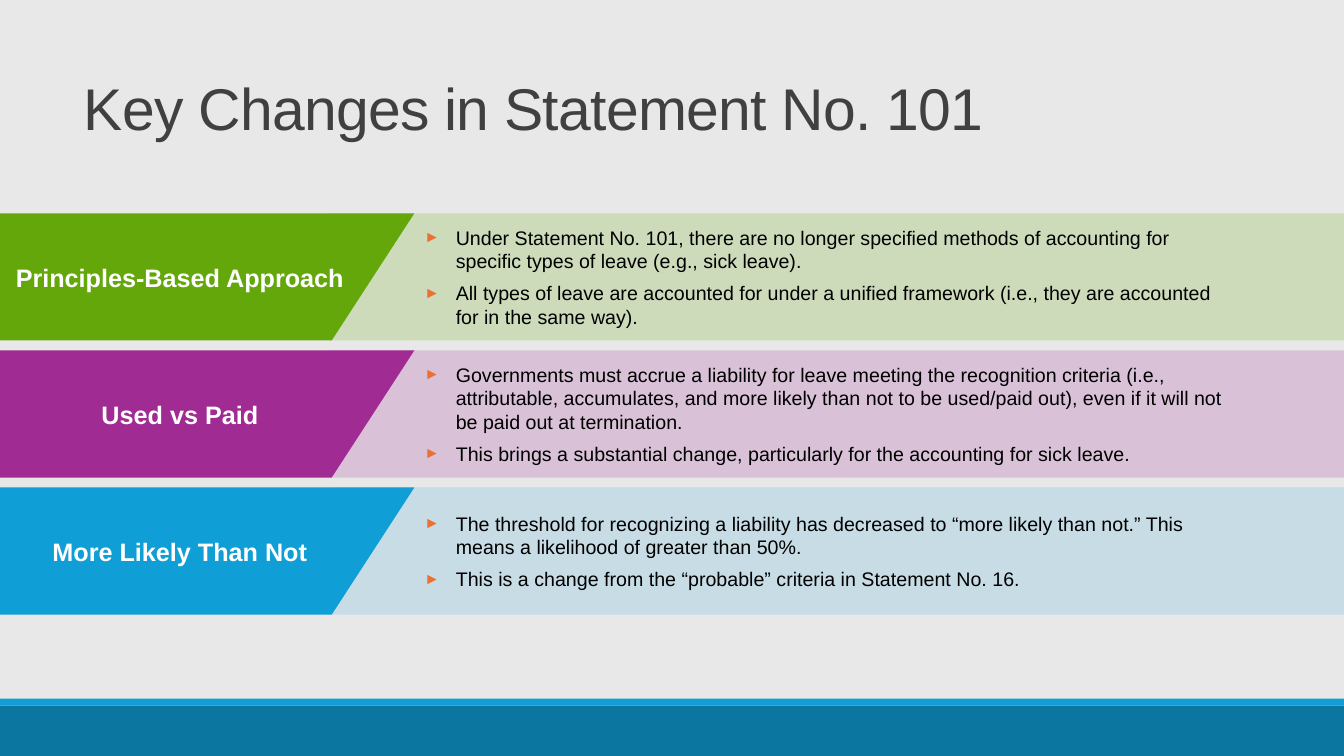
from dataclasses import dataclass

from lxml import etree
from pptx import Presentation
from pptx.dml.color import RGBColor
from pptx.enum.shapes import MSO_SHAPE
from pptx.enum.text import MSO_ANCHOR, PP_ALIGN
from pptx.oxml.ns import qn
from pptx.util import Pt

RECTANGLE = MSO_SHAPE.RECTANGLE
PROCESS = MSO_SHAPE.FLOWCHART_PROCESS
MIDDLE = MSO_ANCHOR.MIDDLE
LEFT, CENTER = PP_ALIGN.LEFT, PP_ALIGN.CENTER


@dataclass(frozen=True)
class Theme:
    font: str = "Arial"
    background: str = "E8E8E8"
    title: str = "404040"
    label: str = "FFFFFF"
    body: str = "000000"
    bullet: str = "E97132"
    footer: str = "0B76A0"
    green: str = "64A70B"
    purple: str = "A02B93"
    blue: str = "0F9ED5"
    title_size: int = 42
    label_size: int = 18
    body_size: int = 14


THEME = Theme()
SLIDE_WIDTH, SLIDE_HEIGHT = 960, 540
FOOTER_TOP, STRIPE_HEIGHT = 504, 5
ROW_TOP, ROW_PITCH, ROW_HEIGHT = 152.4, 97.9, 90.8
BAND_LEFT = 235.4
TAB_TOP_WIDTH, TAB_BOTTOM_WIDTH = 296, 237
LABEL_WIDTH, BODY_WIDTH = 257, 584.6
BULLET_INDENT = 22.5

CHANGES = [
    ("Principles-Based Approach", THEME.green, 20, [
        "Under Statement No. 101, there are no longer specified methods of accounting for "
        "specific types of leave (e.g., sick leave).",
        "All types of leave are accounted for under a unified framework (i.e., they are "
        "accounted for in the same way).",
    ]),
    ("Used vs Paid", THEME.purple, 20, [
        "Governments must accrue a liability for leave meeting the recognition criteria (i.e., "
        "attributable, accumulates, and more likely than not to be used/paid out), even if it "
        "will not be paid out at termination.",
        "This brings a substantial change, particularly for the accounting for sick leave.",
    ]),
    ("More Likely Than Not", THEME.blue, 15, [
        "The threshold for recognizing a liability has decreased to “more likely than not.” "
        "This means a likelihood of greater than 50%.",
        "This is a change from the “probable” criteria in Statement No. 16.",
    ]),
]


def paint(shape, color, opacity=100):
    shape.shadow.inherit = False
    shape.fill.solid()
    shape.fill.fore_color.rgb = RGBColor.from_string(color)
    shape.line.fill.background()
    if opacity < 100:
        color_element = shape.fill._xPr.find(qn("a:solidFill"))[0]
        etree.SubElement(color_element, qn("a:alpha"), val=str(opacity * 1000))


def add_block(slide, kind, left, top, width, height, color, opacity=100):
    block = slide.shapes.add_shape(kind, Pt(left), Pt(top), Pt(width), Pt(height))
    paint(block, color, opacity)


def add_tab(slide, top, color):
    bottom = top + ROW_HEIGHT
    outline = slide.shapes.build_freeform(Pt(TAB_BOTTOM_WIDTH), Pt(bottom))
    corners = [(TAB_TOP_WIDTH, top), (0, top), (0, bottom)]
    outline.add_line_segments([(Pt(x), Pt(y)) for x, y in corners], close=True)
    paint(outline.convert_to_shape(), color)


def set_bullet(paragraph):
    properties = paragraph._p.get_or_add_pPr()
    properties.set("marL", str(Pt(BULLET_INDENT)))
    properties.set("indent", str(-Pt(BULLET_INDENT)))
    bullet_color = etree.SubElement(properties, qn("a:buClr"))
    etree.SubElement(bullet_color, qn("a:srgbClr"), val=THEME.bullet)
    etree.SubElement(properties, qn("a:buSzPct"), val="80000")
    etree.SubElement(properties, qn("a:buFont"), typeface=THEME.font)
    etree.SubElement(properties, qn("a:buChar"), char="►")


def add_text(slide, lines, left, top, width, height, *, size, color, bold=False,
             align=LEFT, line_spacing=None, space_after=0, tracking=0, bulleted=False):
    box = slide.shapes.add_textbox(Pt(left), Pt(top), Pt(width), Pt(height))
    frame = box.text_frame
    frame.word_wrap = True
    frame.vertical_anchor = MIDDLE
    for index, line in enumerate(lines):
        paragraph = frame.add_paragraph() if index else frame.paragraphs[0]
        paragraph.alignment = align
        paragraph.space_after = Pt(space_after)
        if line_spacing:
            paragraph.line_spacing = line_spacing
        if bulleted:
            set_bullet(paragraph)
        run = paragraph.add_run()
        run.text = line
        run.font.name = THEME.font
        run.font.size = Pt(size)
        run.font.bold = bold
        run.font.color.rgb = RGBColor.from_string(color)
        if tracking:
            run._r.get_or_add_rPr().set("spc", str(int(tracking * 100)))


def add_change(slide, top, label, color, opacity, points):
    add_block(slide, PROCESS, BAND_LEFT, top, SLIDE_WIDTH - BAND_LEFT, ROW_HEIGHT,
              color, opacity)
    add_tab(slide, top, color)
    add_text(slide, [label], 0, top, LABEL_WIDTH, ROW_HEIGHT, size=THEME.label_size,
             color=THEME.label, bold=True, align=CENTER)
    add_text(slide, points, TAB_TOP_WIDTH, top, BODY_WIDTH, ROW_HEIGHT,
             size=THEME.body_size, color=THEME.body, space_after=6, bulleted=True)


def main():
    deck = Presentation()
    deck.slide_width, deck.slide_height = Pt(SLIDE_WIDTH), Pt(SLIDE_HEIGHT)
    slide = deck.slides.add_slide(deck.slide_layouts[6])
    slide.background.fill.solid()
    slide.background.fill.fore_color.rgb = RGBColor.from_string(THEME.background)

    add_block(slide, RECTANGLE, 0, FOOTER_TOP, SLIDE_WIDTH, SLIDE_HEIGHT - FOOTER_TOP,
              THEME.footer)
    add_block(slide, RECTANGLE, 0, FOOTER_TOP - STRIPE_HEIGHT, SLIDE_WIDTH, STRIPE_HEIGHT,
              THEME.blue)
    add_text(slide, ["Key Changes in Statement No. 101"], 52.6, 58.3, 788.4, 44,
             size=THEME.title_size, color=THEME.title, line_spacing=0.85, tracking=-0.5)
    for row, change in enumerate(CHANGES):
        add_change(slide, ROW_TOP + row * ROW_PITCH, *change)

    deck.save("out.pptx")


if __name__ == "__main__":
    main()
